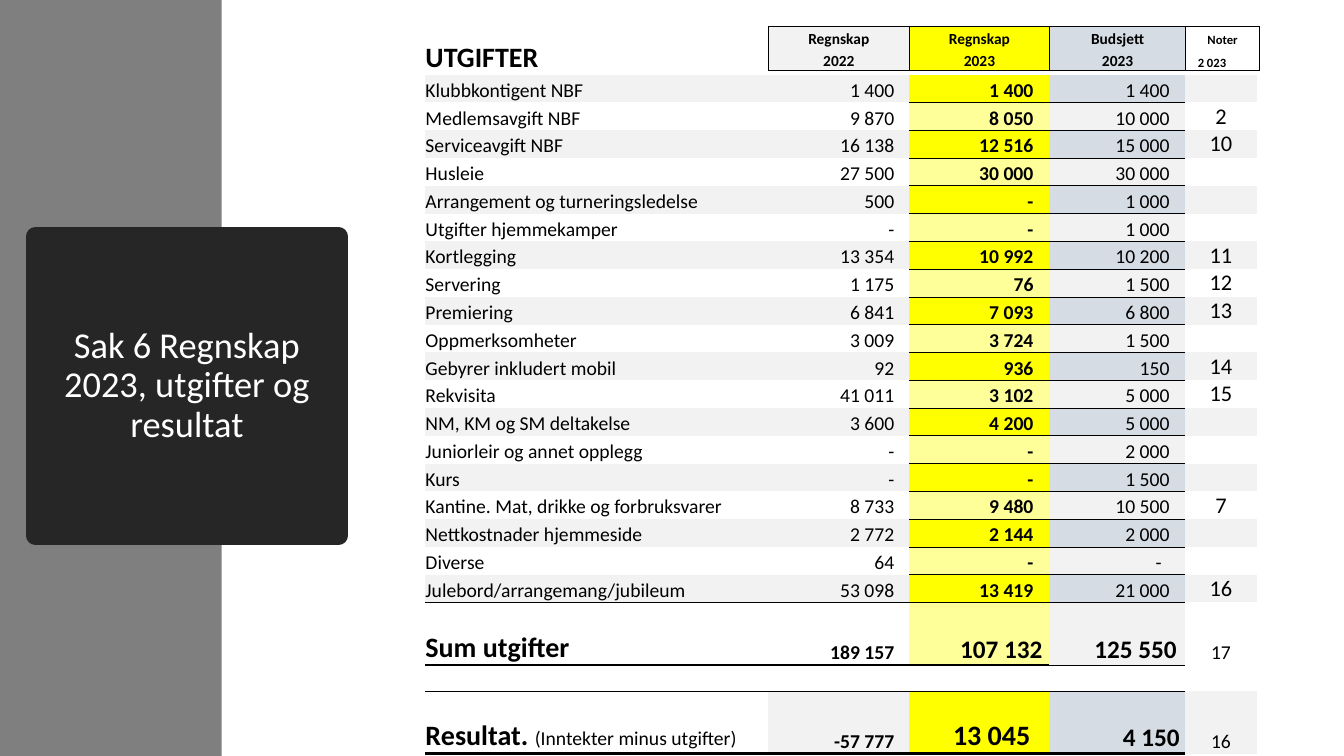
"""Builds the slide with the club's expenses and result for 2023."""
import lxml.etree
import pptx
import pptx.dml.color
import pptx.enum.shapes
import pptx.enum.text
import pptx.oxml.ns
import pptx.util

Inches = pptx.util.Inches
Pt = pptx.util.Pt
qn = pptx.oxml.ns.qn
ALIGN = pptx.enum.text.PP_ALIGN
MIDDLE = pptx.enum.text.MSO_ANCHOR.MIDDLE
BOTTOM = pptx.enum.text.MSO_ANCHOR.BOTTOM
PLAIN_TABLE = "{2D5ABB26-0587-4C30-8999-92F81FD0307C}"

COLORS = {
    "black": "000000",
    "white": "FFFFFF",
    "band": "7F7F7F",
    "title": "262626",
    "grey": "F2F2F2",
    "yellow": "FFFF00",
    "pale": "FFFF99",
    "blue": "D6DCE4",
}
ODD_FILLS = ["grey", "grey", "yellow", "blue", "grey"]
EVEN_FILLS = [None, None, "pale", "grey", None]

COLUMNS = [3.4, 1.4, 1.38, 1.35, 0.72]
HEADER_COLUMNS = [1.4, 1.39, 1.35, 0.73]
HEADER_ROW = 0.22
EXPENSES_HEIGHT = 5.24
AMOUNT_MARGIN = 0.15

HEADERS = [
    ("Regnskap", "2022", "grey"),
    ("Regnskap", "2023", "yellow"),
    ("Budsjett", "2023", "blue"),
    ("Noter", "2 023", None),
]
EXPENSES = [
    ("Klubbkontigent NBF", "1 400", "1 400", "1 400", ""),
    ("Medlemsavgift NBF", "9 870", "8 050", "10 000", "2"),
    ("Serviceavgift NBF", "16 138", "12 516", "15 000", "10"),
    ("Husleie", "27 500", "30 000", "30 000", ""),
    ("Arrangement og turneringsledelse", "500", "-", "1 000", ""),
    ("Utgifter hjemmekamper", "-", "-", "1 000", ""),
    ("Kortlegging", "13 354", "10 992", "10 200", "11"),
    ("Servering", "1 175", "76", "1 500", "12"),
    ("Premiering", "6 841", "7 093", "6 800", "13"),
    ("Oppmerksomheter", "3 009", "3 724", "1 500", ""),
    ("Gebyrer inkludert mobil", "92", "936", "150", "14"),
    ("Rekvisita", "41 011", "3 102", "5 000", "15"),
    ("NM, KM og SM deltakelse", "3 600", "4 200", "5 000", ""),
    ("Juniorleir og annet opplegg", "-", "-", "2 000", ""),
    ("Kurs", "-", "-", "1 500", ""),
    ("Kantine. Mat, drikke og forbruksvarer", "8 733", "9 480", "10 500", "7"),
    ("Nettkostnader hjemmeside", "2 772", "2 144", "2 000", ""),
    ("Diverse", "64", "-", "-", ""),
    ("Julebord/arrangemang/jubileum", "53 098", "13 419", "21 000", "16"),
]
TOTALS = [("189 157", 14, 0.15), ("107 132", 18, 0.06), ("125 550", 18, 0.08)]
RESULTS = [("-57 777", 14, 0.15), ("13 045", 20, 0.18), ("4 150", 18, 0.05)]


def write(paragraph, text, size=14, bold=False, color="black", align=ALIGN.LEFT):
    """Add one formatted run, or size the paragraph when the text is empty."""
    paragraph.alignment = align
    if not text:
        end = lxml.etree.SubElement(paragraph._p, qn("a:endParaRPr"))
        end.set("sz", str(size * 100))
        return
    run = paragraph.add_run()
    run.text = text
    run.font.name = "Calibri"
    run.font.size = Pt(size)
    run.font.bold = bold
    run.font.color.rgb = pptx.dml.color.RGBColor.from_string(COLORS[color])


class AccountsSlide:
    """Holds the current slide and draws its elements in one style."""

    def __init__(self, presentation):
        self.slide = presentation.slides.add_slide(presentation.slide_layouts[6])

    def box(self, left, top, width, height, color, border=0):
        """Add a filled rectangle, with a round-joined border if wanted."""
        box = self.slide.shapes.add_shape(
            pptx.enum.shapes.MSO_SHAPE.RECTANGLE,
            Inches(left), Inches(top), Inches(width), Inches(height))
        rgb = pptx.dml.color.RGBColor.from_string(COLORS[color])
        box.shadow.inherit = False
        box.fill.solid()
        box.fill.fore_color.rgb = rgb
        if border:
            box.line.color.rgb = rgb
            box.line.width = Pt(border)
            lxml.etree.SubElement(box.line._get_or_add_ln(), qn("a:round"))
        else:
            box.line.fill.background()
        return box

    def title(self, text):
        """Add the dark title box."""
        frame = self.box(0.35, 2.35, 3.01, 2.96, "title", border=13.75).text_frame
        frame.word_wrap = True
        frame.vertical_anchor = MIDDLE
        frame.paragraphs[0].line_spacing = 0.9
        write(frame.paragraphs[0], text, size=26, color="white", align=ALIGN.CENTER)

    def table(self, left, top, widths, heights):
        """Add an unstyled table."""
        table = self.slide.shapes.add_table(
            len(heights), len(widths), Inches(left), Inches(top),
            Inches(sum(widths)), Inches(sum(heights))).table
        table.first_row = table.horz_banding = False
        table._tbl.tblPr.find(qn("a:tableStyleId")).text = PLAIN_TABLE
        for column, width in zip(table.columns, widths):
            column.width = Inches(width)
        for row, height in zip(table.rows, heights):
            row.height = Inches(height)
        return table

    def cell(self, cell, text="", fill=None, left=0, right=0, borders=None, **style):
        """Format one cell; borders maps a side (L, R, T, B) to a width."""
        cell.margin_top = cell.margin_bottom = 0
        cell.margin_left, cell.margin_right = Inches(left), Inches(right)
        cell.vertical_anchor = BOTTOM
        borders = borders or {}
        for side in "LRTB":
            if side in borders:
                line = lxml.etree.SubElement(
                    cell._tc.get_or_add_tcPr(), qn(f"a:ln{side}"), w=str(Pt(borders[side])))
                solid = lxml.etree.SubElement(line, qn("a:solidFill"))
                lxml.etree.SubElement(solid, qn("a:srgbClr"), val=COLORS["black"])
        if fill:
            cell.fill.solid()
            cell.fill.fore_color.rgb = pptx.dml.color.RGBColor.from_string(COLORS[fill])
        else:
            cell.fill.background()
        write(cell.text_frame.paragraphs[0], text, **style)

    def summary(self, table, row, label, amounts, note, fills, borders):
        """Fill a row of totals."""
        self.cell(table.cell(row, 0), label, size=20, bold=True, borders=borders[0])
        for column, (amount, size, margin) in enumerate(amounts, 1):
            self.cell(table.cell(row, column), amount, fills[column], right=margin,
                      borders=borders[column], size=size, bold=True, align=ALIGN.RIGHT)
        self.cell(table.cell(row, 4), note, fills[4], align=ALIGN.CENTER)

    def accounts(self):
        """Add the table of expenses, total and result."""
        count = len(EXPENSES)
        heights = [0.34] + [EXPENSES_HEIGHT / count] * count + [0.62, 0.26, 0.62]
        table = self.table(4.22, 0.4, COLUMNS, heights)
        for column in range(5):
            self.cell(table.cell(0, column), "" if column else "UTGIFTER",
                      size=14 if column else 20, bold=True)
        for row, expense in enumerate(EXPENSES, 1):
            fills = ODD_FILLS if row % 2 else EVEN_FILLS
            for column, text in enumerate(expense):
                ruled = column in (2, 3) or (row == count and column < 2)
                amount = 1 <= column <= 3
                align = ALIGN.RIGHT if amount else ALIGN.CENTER if column else ALIGN.LEFT
                margin = 0.23 if column == 3 and text == "-" else AMOUNT_MARGIN
                self.cell(table.cell(row, column), text, fills[column],
                          right=margin if amount else 0,
                          borders={"B": 0.5} if ruled else None,
                          size=16 if column == 4 and text else 14,
                          bold=column == 2, align=align)
        total, gap, result = count + 1, count + 2, count + 3
        heavy = {"T": 0.5, "B": 2}
        thin = {"T": 0.5, "B": 0.5}
        self.summary(table, total, "Sum utgifter", TOTALS, "17", EVEN_FILLS,
                     [heavy, heavy, heavy, thin])
        for column, width in enumerate([2, 2, 2, 0.5]):
            self.cell(table.cell(gap, column), borders={"T": width, "B": 0.5})
        self.cell(table.cell(gap, 4))
        self.summary(table, result, "Resultat. ", RESULTS, "16", ODD_FILLS, [heavy] * 4)
        write(table.cell(result, 0).text_frame.paragraphs[0], "(Inntekter minus utgifter)")

    def headers(self):
        """Add the boxed column headings."""
        table = self.table(7.62, 0.26, HEADER_COLUMNS, [HEADER_ROW] * 2)
        for column, (name, year, fill) in enumerate(HEADERS):
            notes = name == "Noter"
            size = 9 if notes else 11
            self.cell(table.cell(0, column), name, fill, size=size, bold=True,
                      align=ALIGN.CENTER, borders={"L": 0.5, "R": 0.5, "T": 0.5})
            self.cell(table.cell(1, column), year, fill, size=size, bold=True,
                      left=0.12 if notes else 0,
                      align=ALIGN.LEFT if notes else ALIGN.CENTER,
                      borders={"L": 0.5, "R": 0.5, "B": 0.5})


def main():
    """Build and save the presentation."""
    presentation = pptx.Presentation()
    presentation.slide_width = Inches(13.33)
    presentation.slide_height = Inches(7.5)
    page = AccountsSlide(presentation)
    page.box(0, 0, 2.2, 7.5, "band")
    page.accounts()
    page.title("Sak 6 Regnskap 2023, utgifter og resultat")
    page.headers()
    presentation.save("out.pptx")


if __name__ == "__main__":
    main()
